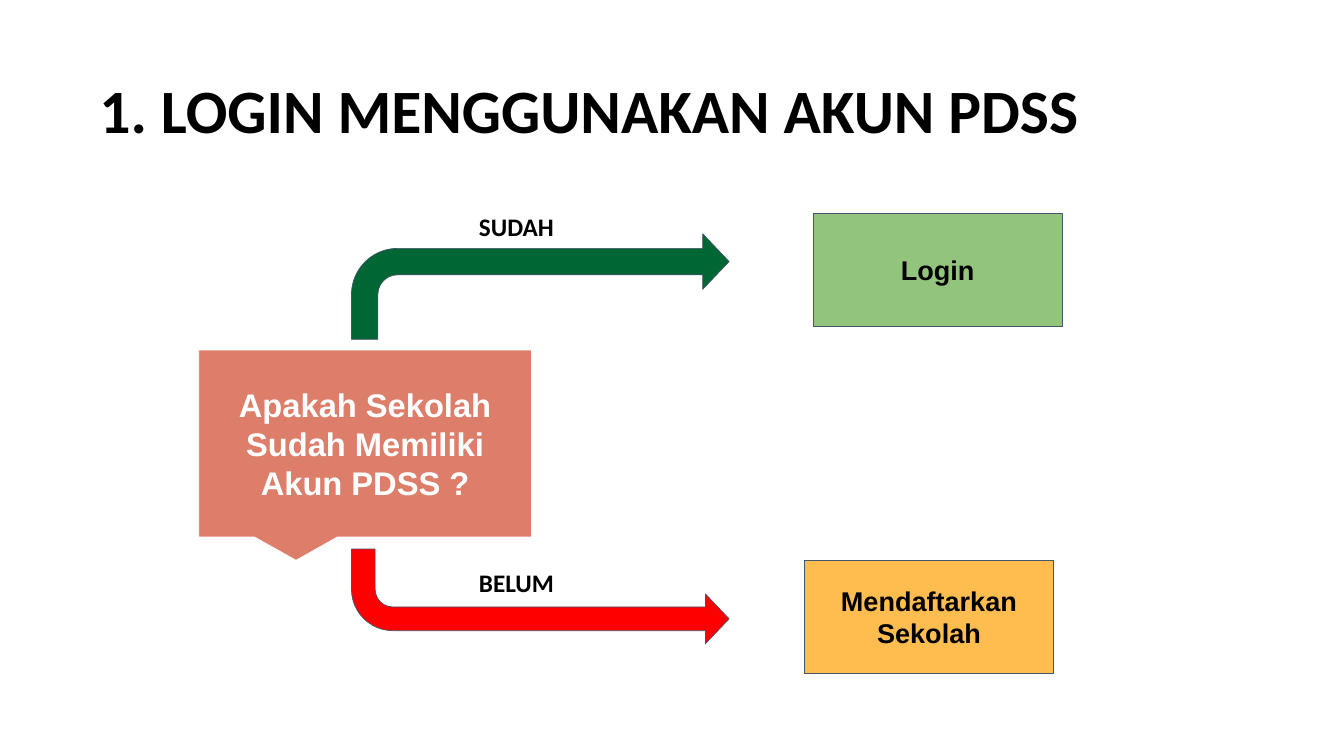
from pptx import Presentation
from pptx.dml.color import RGBColor
from pptx.enum.shapes import MSO_SHAPE
from pptx.enum.text import MSO_ANCHOR, PP_ALIGN
from pptx.oxml.ns import qn
from pptx.util import Pt

PX = 9144  # 100 px to the inch
RECT = MSO_SHAPE.RECTANGLE
CALLOUT = MSO_SHAPE.ROUNDED_RECTANGULAR_CALLOUT
BENT_ARROW = MSO_SHAPE.BENT_ARROW
MIDDLE, TOP = MSO_ANCHOR.MIDDLE, MSO_ANCHOR.TOP
CENTER, LEFT = PP_ALIGN.CENTER, PP_ALIGN.LEFT

COLORS = {
    "black": "000000", "white": "FFFFFF", "slate": "44546A",
    "salmon": "DD7E6B", "light green": "93C47D", "amber": "FFBD4F",
    "dark green": "006634", "red": "FF0000",
}

TITLE = ("1. LOGIN MENGGUNAKAN AKUN PDSS", (138, 60, 1725, 217))
QUESTION = ("Apakah Sekolah Sudah Memiliki Akun PDSS ?", (296, 521, 495, 278))
# text, box, fill
OUTCOMES = [
    ("Login", (1210, 318, 371, 168), "light green"),
    ("Mendaftarkan Sekolah", (1197, 834, 371, 168), "amber"),
]
# label, label top, arrow top, arrow height, fill, turned downwards
BRANCHES = [
    ("SUDAH", 305, 348, 157, "dark green", False),
    ("BELUM", 834, 817, 141, "red", True),
]
ARROW_LEFT, ARROW_WIDTH = 523, 562
LABEL_LEFT, LABEL_WIDTH, LABEL_HEIGHT = 703, 154, 66
ARROW_ADJUSTMENTS = (0.25, 0.263, 0.25, 0.438)
CALLOUT_ADJUSTMENTS = (-0.208, 0.625, 0)


def rgb(name):
    return RGBColor.from_string(COLORS[name])


def emu(box):
    return [v * PX for v in box]


def write(shape, text, size, font="Arial", color="black", align=CENTER,
          anchor=MIDDLE, inset=10):
    tf = shape.text_frame
    tf.word_wrap = True
    tf.vertical_anchor = anchor
    tf.margin_left = tf.margin_right = 10 * PX
    tf.margin_top = tf.margin_bottom = inset * PX
    p = tf.paragraphs[0]
    p.text = text
    p.alignment = align
    p.font.name, p.font.size, p.font.bold = font, Pt(size), True
    p.font.color.rgb = rgb(color)
    return p


def add_shape(s, kind, box, fill, line="slate", adjustments=()):
    sp = s.shapes.add_shape(kind, *emu(box))
    sp.shadow.inherit = False
    sp.fill.solid()
    sp.fill.fore_color.rgb = rgb(fill)
    sp.line.color.rgb = rgb(line)
    sp.line.width = Pt(0.75)
    for i, value in enumerate(adjustments):
        sp.adjustments[i] = value
    return sp


def main():
    prs = Presentation()
    prs.slide_width, prs.slide_height = emu((2000, 1125))
    s = prs.slides.add_slide(prs.slide_layouts[6])

    text, box = TITLE
    title = s.shapes.add_textbox(*emu(box))
    p = write(title, text, 66, "Calibri", align=LEFT, inset=5)
    p.line_spacing = 0.9

    text, box = QUESTION
    callout = add_shape(s, CALLOUT, box, "salmon", "white", CALLOUT_ADJUSTMENTS)
    write(callout, text, 35, color="white")

    for text, box, fill in OUTCOMES:
        write(add_shape(s, RECT, box, fill), text, 29)

    for text, label_top, top, height, fill, downwards in BRANCHES:
        arrow = add_shape(s, BENT_ARROW, (ARROW_LEFT, top, ARROW_WIDTH, height),
                          fill, adjustments=ARROW_ADJUSTMENTS)
        if downwards:
            arrow._element.spPr.find(qn("a:xfrm")).set("flipV", "1")
        label = s.shapes.add_textbox(
            *emu((LABEL_LEFT, label_top, LABEL_WIDTH, LABEL_HEIGHT)))
        write(label, text, 27, "Calibri", align=LEFT, anchor=TOP)

    prs.save("out.pptx")


if __name__ == "__main__":
    main()
